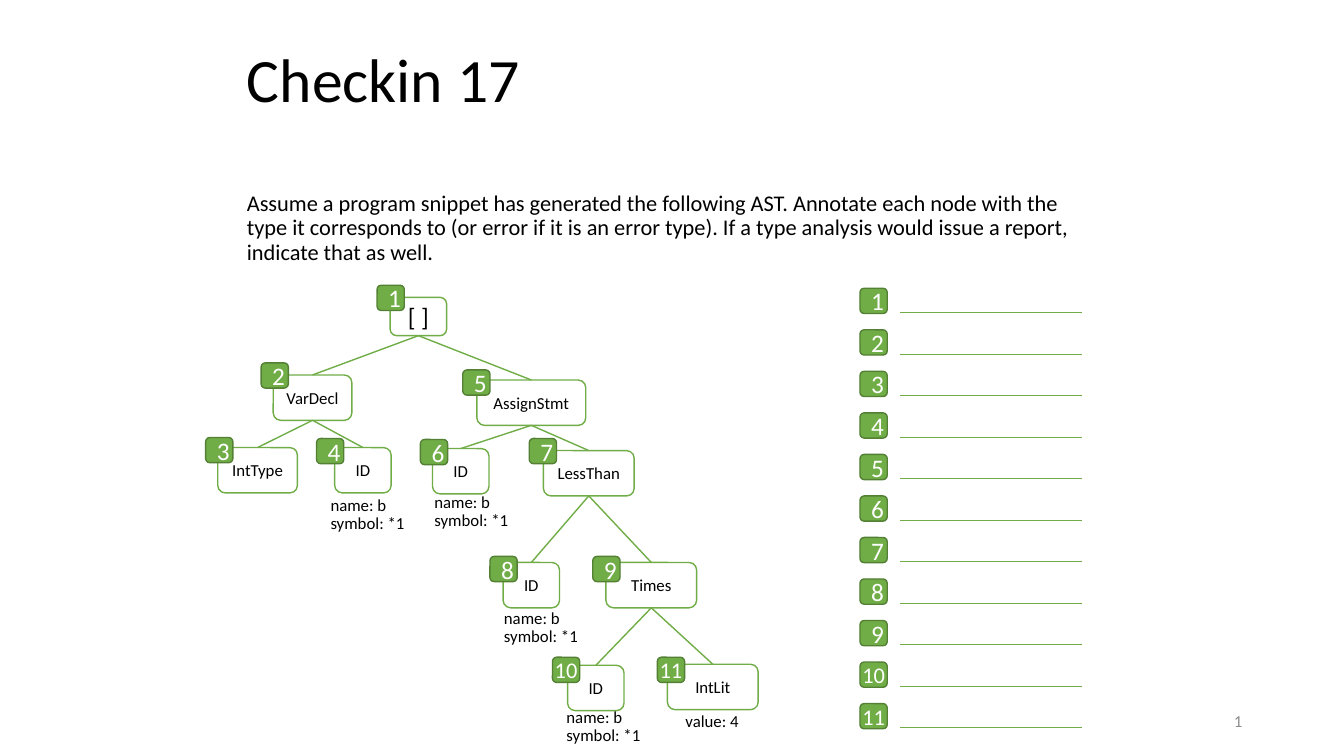
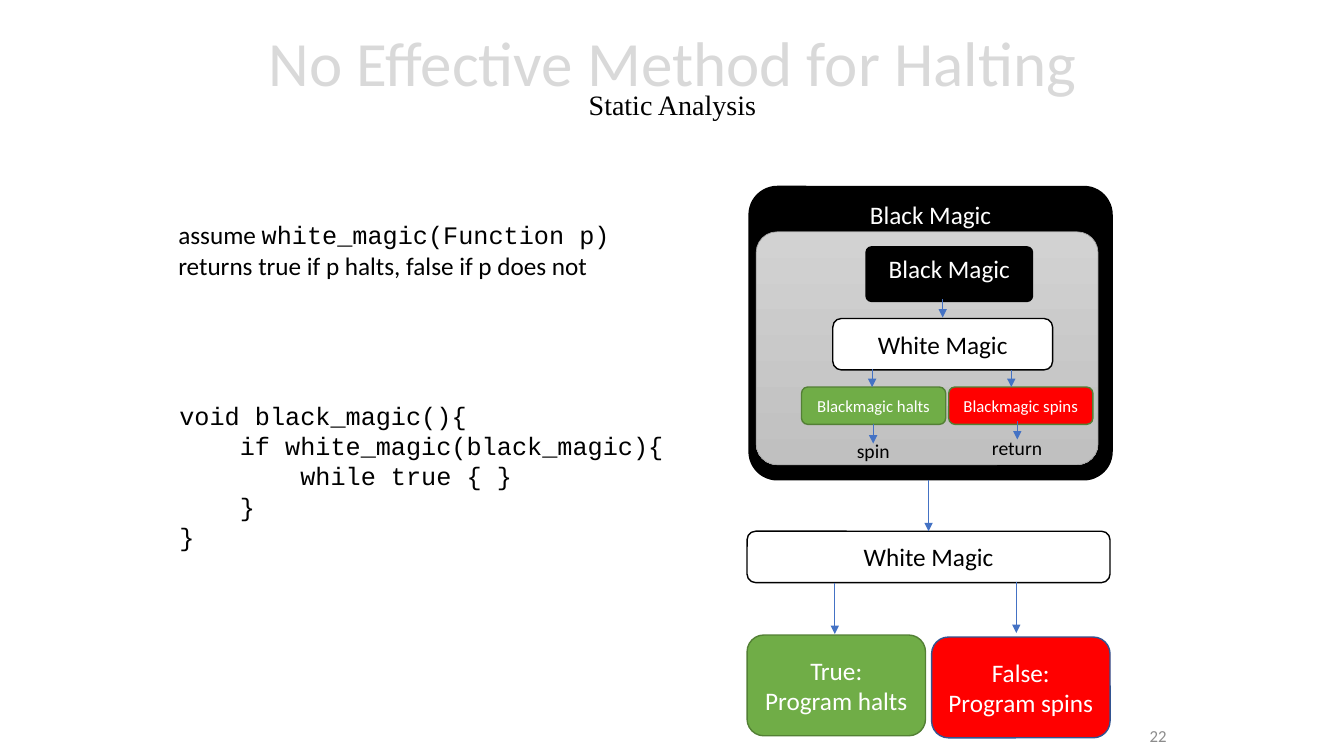
from lxml.etree import SubElement
from pptx import Presentation
from pptx.dml.color import RGBColor
from pptx.enum.shapes import MSO_CONNECTOR, MSO_SHAPE
from pptx.enum.text import MSO_ANCHOR, PP_ALIGN
from pptx.oxml.ns import qn
from pptx.util import Inches, Pt

# Shared look
WIDTH, HEIGHT = 13.33, 7.5
SANS, MONO, SERIF = "Calibri", "Courier New", "Times New Roman"
BLACK, WHITE, GREEN, DARK_GREEN = "000000", "FFFFFF", "70AD47", "538035"
RED, BLUE, NAVY, PALE, GREY = "FF0000", "4472C4", "325491", "D9D9D9", "8C8C8C"
LEFT, CENTER, RIGHT = PP_ALIGN.LEFT, PP_ALIGN.CENTER, PP_ALIGN.RIGHT
TOP, MIDDLE = MSO_ANCHOR.TOP, MSO_ANCHOR.MIDDLE

# Slide 1: number -> label, box, badge corner, parent, annotation
PROMPT = ("Assume a program snippet has generated the following AST. Annotate each "
          "node with the type it corresponds to (or error if it is an error type). "
          "If a type analysis would issue a report, indicate that as well.")
SYMBOL_B = ["name: b", "symbol: *1"]
NODES = {
    1: ("[ ]", (3.87, 2.95, 0.56, 0.38), (3.74, 2.83), None, None),
    2: ("VarDecl", (2.71, 3.72, 0.78, 0.45), (2.59, 3.6), 1, None),
    3: ("IntType", (2.16, 4.44, 0.79, 0.45), (2.04, 4.34), 2, None),
    4: ("ID", (3.32, 4.44, 0.56, 0.45), (3.14, 4.35), 2, (3.18, 4.88, SYMBOL_B)),
    5: ("AssignStmt", (4.73, 3.77, 1.08, 0.45), (4.59, 3.67), 1, None),
    6: ("ID", (4.29, 4.45, 0.56, 0.45), (4.17, 4.36), 5, (4.21, 4.85, SYMBOL_B)),
    7: ("LessThan", (5.39, 4.47, 0.9, 0.45), (5.25, 4.35), 5, None),
    8: ("ID", (4.99, 5.58, 0.56, 0.45), (4.86, 5.52), 7, (4.9, 6, SYMBOL_B)),
    9: ("Times", (6.01, 5.58, 0.9, 0.45), (5.88, 5.52), 7, None),
    10: ("ID", (5.63, 6.6, 0.56, 0.45), (5.48, 6.52), 9, (5.52, 6.98, SYMBOL_B)),
    11: ("IntLit", (6.62, 6.59, 0.9, 0.45), (6.52, 6.52), 9, (6.7, 7.02, ["value: 4"])),
}
BADGE_SIZE = (0.27, 0.25)
ANSWER_LEFT, ANSWER_TOP, ANSWER_PITCH = 8.53, 2.86, 0.412
BLANK_START, BLANK_END, BLANK_DROP = 8.93, 10.73, 0.24

# Slide 2: code as (indent level, text)
CODE = [(0, "void black_magic(){"), (1, "if white_magic(black_magic){"),
        (2, "while true { }"), (1, "}"), (0, "}")]
CODE_INDENT = 0.6
ASSUMPTION = [[("assume ", {}), ("white_magic(Function p)", {"name": MONO})],
              "returns true if p halts, false if p does not"]
# Lines, box, fill, outline, text colour, size, anchor, corner
OUTER_BLOCKS = [
    (["White Magic"], (7.41, 5.27, 3.6, 0.51), WHITE, BLACK, BLACK, 18, MIDDLE, None),
    (["True:", "Program halts"], (7.41, 6.3, 1.77, 1), GREEN, DARK_GREEN, WHITE, 18, MIDDLE, None),
    (["False:", "Program spins"], (9.24, 6.32, 1.77, 1), RED, NAVY, WHITE, 18, MIDDLE, None),
    (["Black Magic"], (7.43, 1.85, 3.6, 2.91), BLACK, BLACK, WHITE, 18, TOP, 0.096),
]
INNER_PANEL = (7.5, 2.3, 3.39, 2.31)
INNER_BLOCKS = [
    (["White Magic"], (8.26, 3.16, 2.18, 0.51), WHITE, BLACK, BLACK, 18, MIDDLE, None),
    (["Blackmagic halts"], (7.95, 3.84, 1.43, 0.37), GREEN, DARK_GREEN, WHITE, 12, MIDDLE, None),
    (["Blackmagic spins"], (9.41, 3.84, 1.43, 0.37), RED, DARK_GREEN, WHITE, 12, MIDDLE, None),
    (["Black Magic"], (8.59, 2.45, 1.65, 0.54), BLACK, BLACK, WHITE, 18, TOP, 0.096),
]
OUTCOMES = [("spin", (8.4, 4.31, 0.8, 0.34)), ("return", (9.74, 4.28, 0.9, 0.34))]
ARROWS = [(8.28, 5.78, 6.29), (10.08, 5.77, 6.28), (9.21, 4.76, 5.27),
          (8.66, 4.21, 4.4), (10.09, 4.18, 4.36), (8.65, 3.66, 3.84),
          (10.03, 3.67, 3.84), (9.35, 2.97, 3.15)]


def color(code):
    return RGBColor.from_string(code)


def style(span, size=18, name=SANS, ink=BLACK):
    for key, value in {"size": Pt(size), "name": name}.items():
        setattr(span.font, key, value)
    span.font.color.rgb = color(ink)


def write(frame, lines, align=LEFT, anchor=TOP, spacing=None, **font):
    """Each line is a string or a list of (text, font changes)."""
    frame.word_wrap, frame.vertical_anchor = True, anchor
    for index, line in enumerate(lines):
        para = frame.paragraphs[0] if index == 0 else frame.add_paragraph()
        para.alignment, para.line_spacing = align, spacing
        for text, changes in ([(line, {})] if isinstance(line, str) else line):
            if text == "\n":
                para.add_line_break()
                continue
            span = para.add_run()
            span.text = text
            style(span, **{**font, **changes})


def add_text(page, at, lines, **options):
    box = page.shapes.add_textbox(*map(Inches, at))
    write(box.text_frame, lines, **options)
    return box


def add_block(page, at, lines, fill, outline, weight=1, corner=None, **options):
    block = page.shapes.add_shape(MSO_SHAPE.ROUNDED_RECTANGLE, *map(Inches, at))
    block.shadow.inherit = False
    if corner:
        block.adjustments[0] = corner
    if isinstance(fill, str):
        block.fill.solid()
        block.fill.fore_color.rgb = color(fill)
    else:
        block.fill.gradient()
        block.fill.gradient_angle = 270
        for stop, code in zip(block.fill.gradient_stops, fill):
            stop.color.rgb = color(code)
    block.line.color.rgb = color(outline)
    block.line.width = Pt(weight)
    write(block.text_frame, lines, align=CENTER, **options)
    return block


def add_line(page, start, end, ink, weight, arrow=False):
    line = page.shapes.add_connector(MSO_CONNECTOR.STRAIGHT, *map(Inches, start + end))
    line.line.color.rgb = color(ink)
    line.line.width = Pt(weight)
    properties = line.element.spPr
    if arrow:
        SubElement(properties.find(qn("a:ln")), qn("a:tailEnd"), type="triangle")
    SubElement(properties, qn("a:effectLst"))
    return line


def add_badge(page, left, top, number):
    wide = number > 9
    badge = add_block(page, (left, top, *BADGE_SIZE), [str(number)], GREEN, DARK_GREEN,
                      anchor=MIDDLE, size=16 if wide else 18, ink=WHITE)
    if wide:
        badge.text_frame.margin_left = badge.text_frame.margin_right = 0


def new_page(deck, title, title_at, number, number_at, **title_options):
    page = deck.slides.add_slide(deck.slide_layouts[6])
    add_text(page, title_at, [title], anchor=MIDDLE, **title_options)
    add_text(page, number_at, [number], align=RIGHT, anchor=MIDDLE, size=12, ink=GREY)
    return page


def build_checkin(deck):
    page = new_page(deck, "Checkin 17", (2.35, 0.09, 8.62, 1.45),
                    "1", (9.42, 6.95, 3, 0.4), spacing=0.9, size=44)
    add_text(page, (2.35, 1.86, 8.62, 0.95), [PROMPT], spacing=0.9, size=16)

    # Tree nodes, then edges from parent bottom to child top
    blocks = {number: add_block(page, at, [label], WHITE, GREEN, anchor=MIDDLE,
                                size=12 if label.isalpha() else 18)
              for number, (label, at, *_) in NODES.items()}
    for number, (_, _, _, parent, note) in NODES.items():
        if parent:
            edge = add_line(page, (0, 0), (1, 1), GREEN, 1)
            edge.begin_connect(blocks[parent], 2)
            edge.end_connect(blocks[number], 0)
        if note:
            left, top, lines = note
            add_text(page, (left, top, 1.1, 0.46), lines, spacing=Pt(13), size=12)

    # Badges on the tree and the numbered answer blanks
    for row, (number, (_, _, corner, _, _)) in enumerate(NODES.items()):
        add_badge(page, *corner, number)
        top = ANSWER_TOP + row * ANSWER_PITCH
        add_badge(page, ANSWER_LEFT, top, number)
        add_line(page, (BLANK_START, top + BLANK_DROP), (BLANK_END, top + BLANK_DROP),
                 GREEN, 0.5)


def build_halting(deck):
    title = [("No Effective Method for Halting", {"size": 45, "ink": PALE}), ("\n", {}),
             ("Static Analysis", {"size": 20, "name": SERIF})]
    page = new_page(deck, title, (1.67, 0.09, 10, 1.45),
                    "22", (9.42, 7.1, 2.25, 0.4), align=CENTER, spacing=0.7)
    add_text(page, (1.67, 2.13, 4.8, 0.71), ASSUMPTION)
    code = add_text(page, (1.68, 3.92, 5.2, 1.62), [text for _, text in CODE], name=MONO)
    for para, (level, _) in zip(code.text_frame.paragraphs, CODE):
        para._p.get_or_add_pPr().set("marL", str(Inches(level * CODE_INDENT)))

    # Nested machine: outer blocks, grey panel, inner blocks
    def add_blocks(blocks):
        for lines, at, fill, outline, ink, size, anchor, corner in blocks:
            add_block(page, at, lines, fill, outline, corner=corner,
                      ink=ink, size=size, anchor=anchor)

    add_blocks(OUTER_BLOCKS)
    add_block(page, INNER_PANEL, [], ("D2D2D2", "C0C0C0"), "A5A5A5", 0.5, 0.089)
    add_blocks(INNER_BLOCKS)
    for text, at in OUTCOMES:
        add_text(page, at, [text], size=14)
    for x, top, bottom in ARROWS:
        add_line(page, (x, top), (x, bottom), BLUE, 0.5, arrow=True)


def main():
    deck = Presentation()
    deck.slide_width, deck.slide_height = Inches(WIDTH), Inches(HEIGHT)
    build_checkin(deck)
    build_halting(deck)
    deck.save("out.pptx")


if __name__ == "__main__":
    main()
